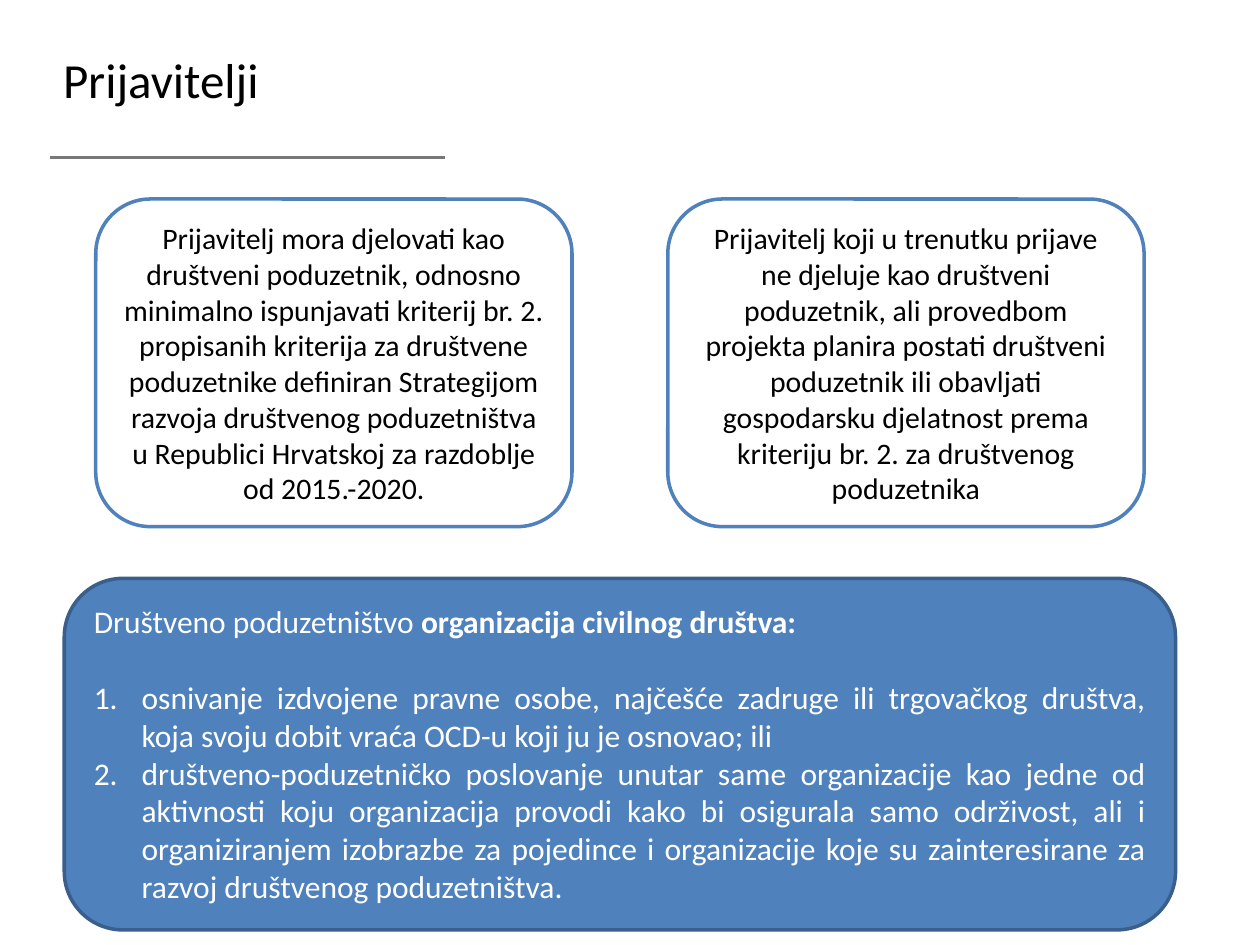
from dataclasses import dataclass

from lxml import etree
from pptx import Presentation
from pptx.dml.color import RGBColor
from pptx.enum.shapes import MSO_CONNECTOR, MSO_SHAPE
from pptx.enum.text import MSO_ANCHOR, MSO_AUTO_SIZE, PP_ALIGN
from pptx.oxml.ns import qn
from pptx.util import Inches, Pt

STRAIGHT = MSO_CONNECTOR.STRAIGHT
ROUNDED = MSO_SHAPE.ROUNDED_RECTANGLE
TOP, MIDDLE = MSO_ANCHOR.TOP, MSO_ANCHOR.MIDDLE
LEFT, CENTER, JUSTIFY = PP_ALIGN.LEFT, PP_ALIGN.CENTER, PP_ALIGN.JUSTIFY
FIXED, GROW = MSO_AUTO_SIZE.NONE, MSO_AUTO_SIZE.SHAPE_TO_FIT_TEXT


@dataclass(frozen=True)
class Theme:
    font: str = "Calibri"
    ink: str = "000000"
    paper: str = "FFFFFF"
    accent: str = "4F81BD"
    accent_dark: str = "3A5F8C"
    rule: str = "777877"
    title_size: int = 28
    card_size: int = 17
    panel_size: int = 18
    line_width: int = 2


THEME = Theme()

APPLICANTS = [
    "Prijavitelj mora djelovati kao društveni poduzetnik, odnosno minimalno "
    "ispunjavati kriterij br. 2. propisanih kriterija za društvene poduzetnike "
    "definiran Strategijom razvoja društvenog poduzetništva u Republici "
    "Hrvatskoj za razdoblje od 2015.-2020.",
    "Prijavitelj koji u trenutku prijave ne djeluje kao društveni poduzetnik, "
    "ali provedbom projekta planira postati društveni poduzetnik ili obavljati "
    "gospodarsku djelatnost prema kriteriju br. 2. za društvenog poduzetnika",
]
FORMS_HEADING = [
    ("Društveno poduzetništvo ", False),
    ("organizacija civilnog društva:", True),
]
FORMS = [
    "osnivanje izdvojene pravne osobe, najčešće zadruge ili trgovačkog društva, "
    "koja svoju dobit vraća OCD-u koji ju je osnovao; ili ",
    "društveno-poduzetničko poslovanje unutar same organizacije kao jedne od "
    "aktivnosti koju organizacija provodi kako bi osigurala samo održivost, ali "
    "i organiziranjem izobrazbe za pojedince i organizacije koje su "
    "zainteresirane za razvoj društvenog poduzetništva.",
]


def apply_format(target, values):
    for name, value in values.items():
        setattr(target, name, value)


def add_text(paragraph, text, size, color, bold=False):
    run = paragraph.add_run()
    run.text = text
    apply_format(run.font, {"name": THEME.font, "size": Pt(size), "bold": bold})
    run.font.color.rgb = RGBColor.from_string(color)


def set_line(line, color):
    line.color.rgb = RGBColor.from_string(color)
    line.width = Pt(THEME.line_width)


def number_paragraph(paragraph, indent):
    """Give the paragraph an automatic number with a hanging indent."""
    properties = paragraph._p.get_or_add_pPr()
    properties.set("marL", str(indent))
    properties.set("indent", str(-indent))
    etree.SubElement(properties, qn("a:buFont"), typeface="+mj-lt")
    etree.SubElement(properties, qn("a:buAutoNum"), type="arabicPeriod")


def add_rounded_box(slide, box, fill, outline):
    shape = slide.shapes.add_shape(ROUNDED, *box)
    shape.shadow.inherit = False
    shape.fill.solid()
    shape.fill.fore_color.rgb = RGBColor.from_string(fill)
    set_line(shape.line, outline)
    return shape


def add_heading(slide, left, top, width, height):
    """Place the title with a short rule along the bottom of its box."""
    title = slide.shapes.title
    apply_format(title, {"left": left, "top": top, "width": width, "height": height})
    frame = title.text_frame
    apply_format(frame, {"vertical_anchor": MIDDLE, "auto_size": FIXED})
    heading = frame.paragraphs[0]
    heading.alignment = LEFT
    add_text(heading, "Prijavitelji", THEME.title_size, THEME.ink)

    bottom = top + height
    rule = slide.shapes.add_connector(
        STRAIGHT, left, bottom, left + Inches(3.13), bottom)
    set_line(rule.line, THEME.rule)
    etree.SubElement(rule._element.spPr, qn("a:effectLst"))


def add_applicant_cards(slide, left, top, width, height):
    gap = Inches(0.76)
    count = len(APPLICANTS)
    card_width = (width - gap * (count - 1)) // count
    for index, applicant in enumerate(APPLICANTS):
        card_left = left + index * (card_width + gap)
        card = add_rounded_box(
            slide, (card_left, top, card_width, height), THEME.paper, THEME.accent)
        frame = card.text_frame
        apply_format(frame, {"word_wrap": True, "vertical_anchor": MIDDLE})
        frame.paragraphs[0].alignment = CENTER
        add_text(frame.paragraphs[0], applicant, THEME.card_size, THEME.ink)


def add_forms_panel(slide, left, top, width, height):
    panel = add_rounded_box(
        slide, (left, top, width, height), THEME.accent, THEME.accent_dark)
    frame = panel.text_frame
    apply_format(
        frame, {"word_wrap": True, "vertical_anchor": TOP, "auto_size": GROW})
    heading = frame.paragraphs[0]
    heading.alignment = JUSTIFY
    for text, bold in FORMS_HEADING:
        add_text(heading, text, THEME.panel_size, THEME.paper, bold)
    for index, form in enumerate(FORMS):
        item = frame.add_paragraph()
        item.alignment = JUSTIFY
        if index == 0:
            item.space_before = Pt(22)
        number_paragraph(item, Inches(0.38))
        add_text(item, form, THEME.panel_size, THEME.paper)


def main():
    presentation = Presentation()
    apply_format(
        presentation, {"slide_width": Inches(10), "slide_height": Inches(7.5)})
    slide = presentation.slides.add_slide(
        presentation.slide_layouts.get_by_name("Title Only"))
    add_heading(slide, Inches(0.4), Inches(0), Inches(7.91), Inches(1.25))
    add_applicant_cards(
        slide, Inches(0.76), Inches(1.58), Inches(8.32), Inches(2.6))
    add_forms_panel(
        slide, Inches(0.51), Inches(4.59), Inches(8.82), Inches(2.79))
    presentation.save("out.pptx")


if __name__ == "__main__":
    main()
